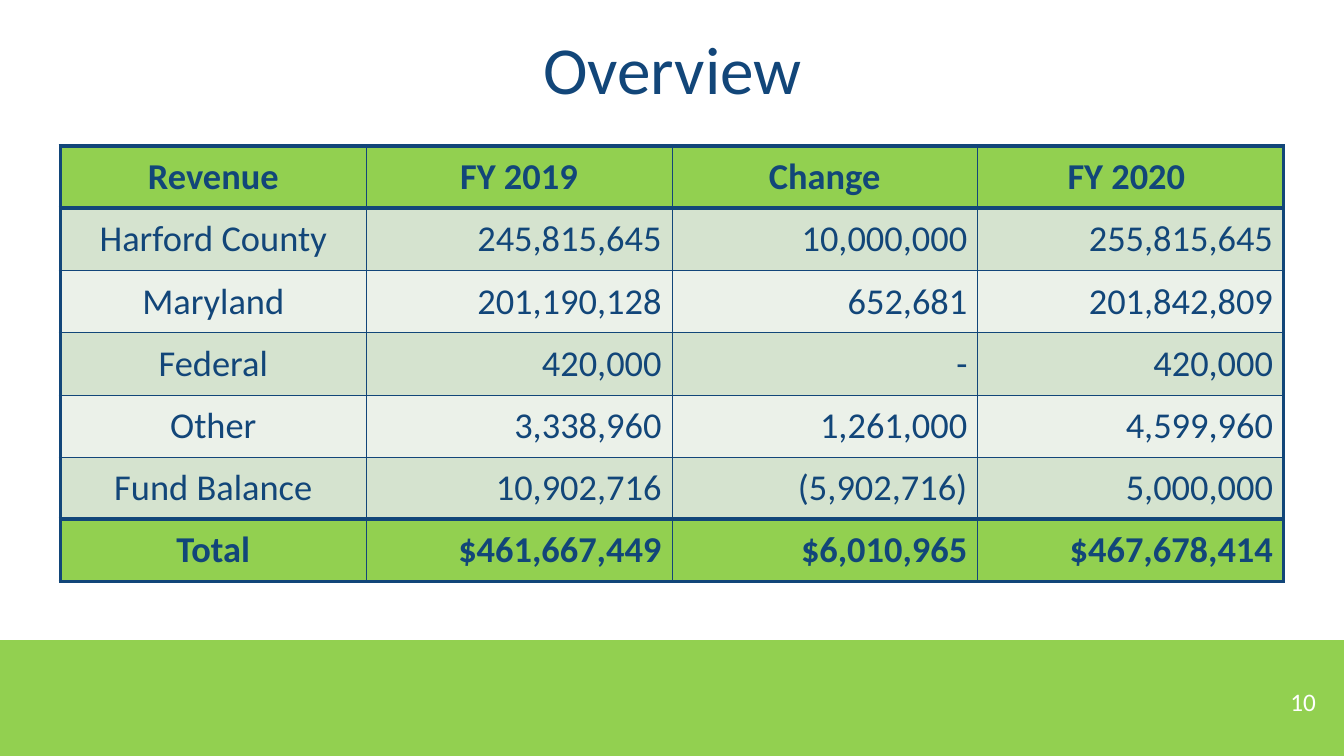
from lxml import etree
from pptx import Presentation
from pptx.dml.color import RGBColor
from pptx.enum.shapes import MSO_SHAPE
from pptx.enum.text import MSO_ANCHOR, PP_ALIGN
from pptx.oxml.ns import qn
from pptx.util import Inches, Pt

RECTANGLE = MSO_SHAPE.RECTANGLE
MIDDLE = MSO_ANCHOR.MIDDLE
CENTER, RIGHT = PP_ALIGN.CENTER, PP_ALIGN.RIGHT

COLORS = {
    "navy": "124679",
    "green": "92D050",
    "sage": "D5E3CF",
    "mist": "EBF1E9",
    "white": "FFFFFF",
}
THICK, MEDIUM, THIN = 3, 0.75, 0.5
SLIDE_WIDTH, SLIDE_HEIGHT = 13.33, 7.5

REVENUE = [
    ("Revenue", "FY 2019", "Change", "FY 2020 "),
    ("Harford County", "245,815,645", "10,000,000", "255,815,645"),
    ("Maryland", "201,190,128", "652,681", "201,842,809"),
    ("Federal", "420,000", "-", "420,000"),
    ("Other", "3,338,960", "1,261,000", "4,599,960"),
    ("Fund Balance", "10,902,716", "(5,902,716)", "5,000,000"),
    ("Total", "$461,667,449", "$6,010,965", "$467,678,414"),
]


def rgb(name):
    """Return the named colour as an RGBColor."""
    return RGBColor.from_string(COLORS[name])


class SlideBuilder:
    """Hold the text style and the current slide, and add elements to it."""

    def __init__(self, slide, font_name):
        """Keep the slide and the font used on it."""
        self.slide = slide
        self.font_name = font_name

    def fill_text(self, frame, text, align, size, color, bold=False, spacing=None):
        """Put one formatted paragraph in a text frame."""
        frame.word_wrap = True
        paragraph = frame.paragraphs[0]
        paragraph.text = text
        paragraph.alignment = align
        paragraph.line_spacing = spacing
        font_format = {"name": self.font_name, "size": Pt(size), "bold": bold}
        for attribute, value in font_format.items():
            setattr(paragraph.font, attribute, value)
        paragraph.font.color.rgb = rgb(color)

    def title(self, text, bounds, size):
        """Place and format the title placeholder."""
        heading = self.slide.shapes.title
        for attribute, value in zip(("left", "top", "width", "height"), bounds):
            setattr(heading, attribute, Inches(value))
        heading.text_frame.vertical_anchor = MIDDLE
        self.fill_text(heading.text_frame, text, CENTER, size, "navy", spacing=0.9)

    def band(self, bounds, color):
        """Add a plain coloured rectangle."""
        footer = self.slide.shapes.add_shape(RECTANGLE, *map(Inches, bounds))
        footer.shadow.inherit = False
        footer.fill.solid()
        footer.fill.fore_color.rgb = rgb(color)
        footer.line.fill.background()

    def label(self, text, bounds, align, size, color):
        """Add a text box with one line of text."""
        frame = self.slide.shapes.add_textbox(*map(Inches, bounds)).text_frame
        frame.vertical_anchor = MIDDLE
        self.fill_text(frame, text, align, size, color)

    def borders(self, cell, widths):
        """Draw the left, right, top and bottom borders of a cell."""
        properties = cell._tc.get_or_add_tcPr()
        for position, (side, width) in enumerate(zip("LRTB", widths)):
            line = etree.Element(qn(f"a:ln{side}"), w=str(Pt(width)))
            fill = etree.SubElement(line, qn("a:solidFill"))
            etree.SubElement(fill, qn("a:srgbClr"), val=COLORS["navy"])
            properties.insert(position, line)

    def table(self, rows, bounds, size):
        """Add a table with a header row, banded rows and a total row."""
        last_row, last_column = len(rows) - 1, len(rows[0]) - 1
        grid = self.slide.shapes.add_table(
            len(rows), len(rows[0]), *map(Inches, bounds)
        ).table
        for row, texts in enumerate(rows):
            emphasized = row in (0, last_row)
            fill = "green" if emphasized else ("mist", "sage")[row % 2]
            inner = MEDIUM if row == last_row else THIN
            top = THICK if row in (0, 1, last_row) else THIN
            bottom = THICK if row in (0, last_row - 1, last_row) else THIN
            for column, text in enumerate(texts):
                cell = grid.cell(row, column)
                cell.vertical_anchor = MIDDLE
                cell.fill.solid()
                cell.fill.fore_color.rgb = rgb(fill)
                align = CENTER if row == 0 or column == 0 else RIGHT
                self.fill_text(cell.text_frame, text, align, size, "navy", emphasized)
                left = THICK if column == 0 else inner
                right = THICK if column == last_column else inner
                self.borders(cell, (left, right, top, bottom))


def main():
    """Build the revenue overview slide and save it."""
    deck = Presentation()
    deck.slide_width, deck.slide_height = Inches(SLIDE_WIDTH), Inches(SLIDE_HEIGHT)
    overview = SlideBuilder(deck.slides.add_slide(deck.slide_layouts[5]), "Calibri")
    overview.band((0, 6.35, SLIDE_WIDTH, SLIDE_HEIGHT - 6.35), "green")
    overview.title("Overview", (0.92, 0, 11.5, 1.45), 48)
    overview.label("10", (10.15, 6.76, 3, 0.4), RIGHT, 18, "white")
    overview.table(REVENUE, (0.6, 1.45, 12.13, 4.32), 26)
    deck.save("out.pptx")


if __name__ == "__main__":
    main()
